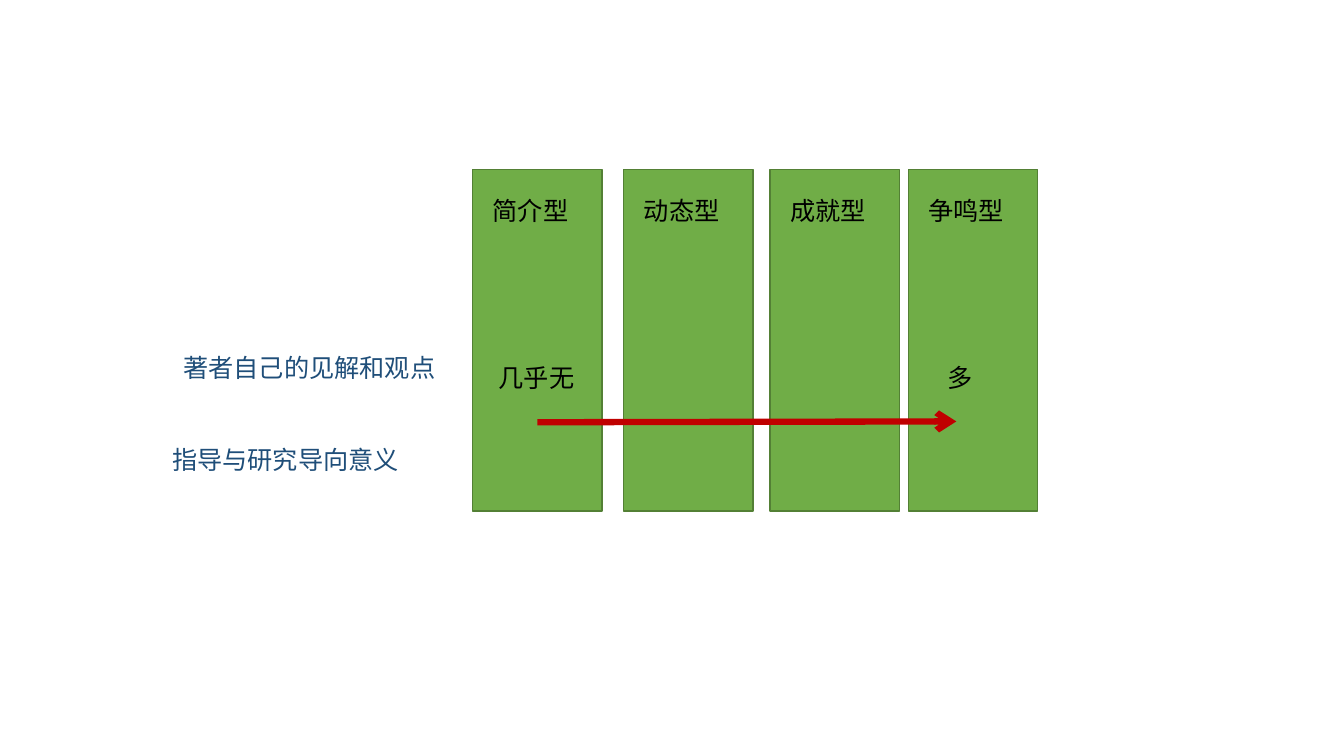
from lxml import etree
from pptx import Presentation
from pptx.dml.color import RGBColor
from pptx.enum.shapes import MSO_CONNECTOR, MSO_SHAPE
from pptx.enum.text import MSO_AUTO_SIZE
from pptx.oxml.ns import qn
from pptx.util import Cm, Pt

RECTANGLE = MSO_SHAPE.RECTANGLE
STRAIGHT = MSO_CONNECTOR.STRAIGHT
FIT_SHAPE = MSO_AUTO_SIZE.SHAPE_TO_FIT_TEXT

REVIEW_TYPES = [("简介型", 11.91), ("动态型", 15.72), ("成就型", 19.41), ("争鸣型", 22.89)]
AMOUNTS = [("几乎无", 12.32), ("多", 23.62)]
CRITERIA = [("著者自己的见解和观点", 4.37, 8.76, 7.14), ("指导与研究导向意义", 4.09, 11.07, 6.6)]

GREEN = RGBColor(0x70, 0xAD, 0x47)
DARK_GREEN = RGBColor(0x53, 0x80, 0x35)
RED = RGBColor(0xC0, 0x00, 0x00)
BLUE = RGBColor(0x1F, 0x4E, 0x79)
BLACK = RGBColor(0x00, 0x00, 0x00)
LATIN_FONT = "Calibri"
CHINESE_FONT = "Noto Sans CJK SC"

COLUMN_TOP, COLUMN_WIDTH, COLUMN_HEIGHT = 4.27, 3.26, 8.61
NAME_INSET, NAME_TOP, NAME_WIDTH = 0.26, 4.8, 2.72
AMOUNT_TOP, AMOUNT_WIDTH = 9, 2.41
LABEL_HEIGHT = 1.02


def add_label(slide, words, left, top, width, color=BLACK, font_name=LATIN_FONT):
    label = slide.shapes.add_textbox(Cm(left), Cm(top), Cm(width), Cm(LABEL_HEIGHT))
    frame = label.text_frame
    frame.word_wrap = True
    frame.auto_size = FIT_SHAPE
    frame.text = words
    font = frame.paragraphs[0].font
    font.size = Pt(18)
    font.color.rgb = color
    font.name = font_name
    latin = frame.paragraphs[0]._p.find(".//" + qn("a:latin"))
    east_asian = etree.Element(qn("a:ea"), typeface=CHINESE_FONT)
    latin.addnext(east_asian)


def add_column(slide, left):
    column = slide.shapes.add_shape(
        RECTANGLE, Cm(left), Cm(COLUMN_TOP), Cm(COLUMN_WIDTH), Cm(COLUMN_HEIGHT))
    column.shadow.inherit = False
    column.fill.solid()
    column.fill.fore_color.rgb = GREEN
    column.line.color.rgb = DARK_GREEN
    column.line.width = Pt(1)


def add_trend_arrow(slide):
    trend = slide.shapes.add_connector(STRAIGHT, Cm(13.54), Cm(10.64), Cm(24.1), Cm(10.62))
    trend.line.color.rgb = RED
    trend.line.width = Pt(4.5)
    etree.SubElement(trend.line._get_or_add_ln(), qn("a:tailEnd"), type="arrow")
    etree.SubElement(trend._element.spPr, qn("a:effectLst"))


def main():
    deck = Presentation()
    deck.slide_width, deck.slide_height = Cm(33.87), Cm(19.05)
    slide = deck.slides.add_slide(deck.slide_layouts[6])
    for name, left in REVIEW_TYPES:
        add_column(slide, left)
        add_label(slide, name, left + NAME_INSET, NAME_TOP, NAME_WIDTH)
    for amount, left in AMOUNTS:
        add_label(slide, amount, left, AMOUNT_TOP, AMOUNT_WIDTH)
    add_trend_arrow(slide)
    for criterion, left, top, width in CRITERIA:
        add_label(slide, criterion, left, top, width, BLUE, CHINESE_FONT)
    deck.save("out.pptx")


if __name__ == "__main__":
    main()
